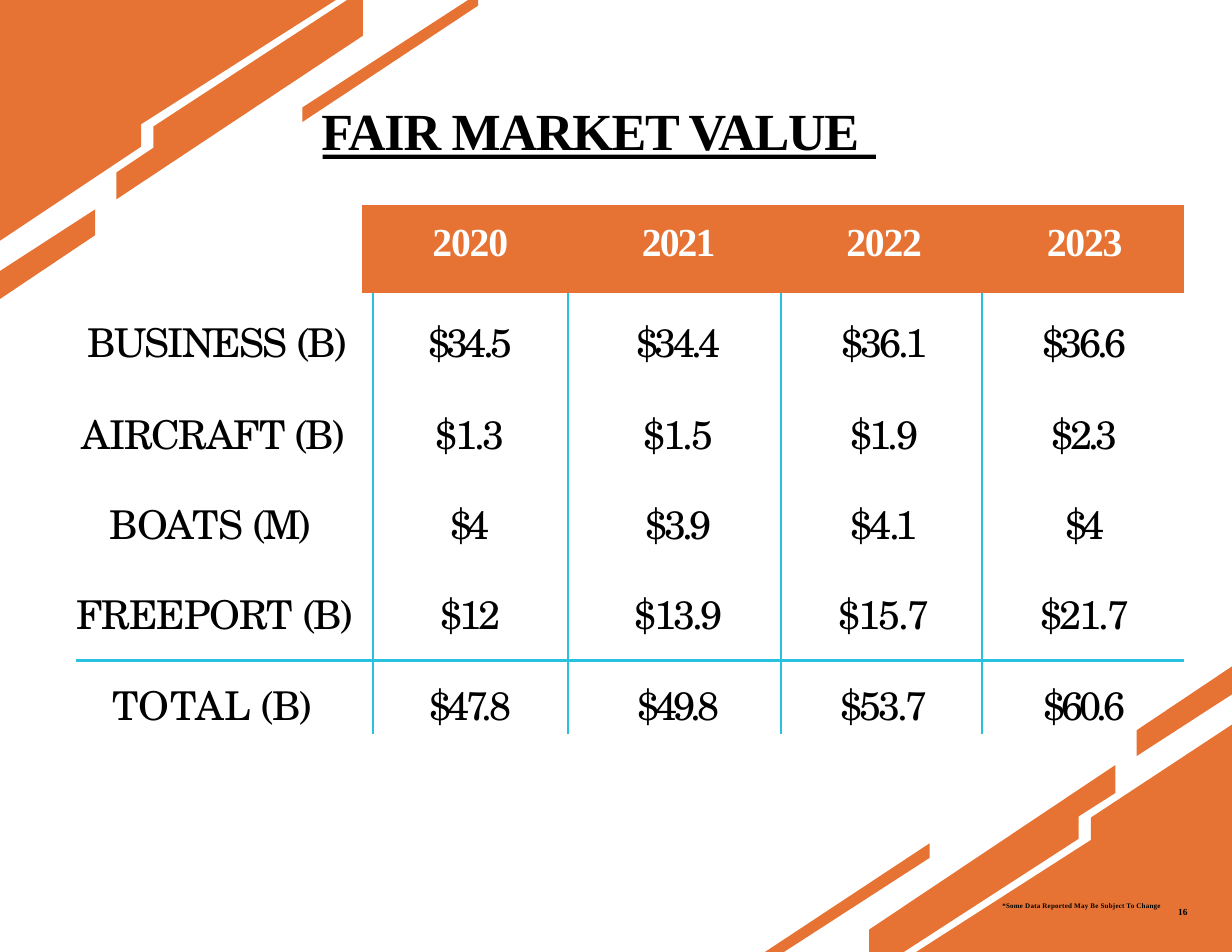
from dataclasses import dataclass

from lxml.etree import SubElement
from pptx import Presentation
from pptx.dml.color import RGBColor
from pptx.enum.shapes import MSO_SHAPE
from pptx.enum.text import PP_ALIGN
from pptx.oxml.ns import qn
from pptx.util import Inches, Pt


@dataclass(frozen=True)
class Theme:
    orange: RGBColor = RGBColor(0xE6, 0x73, 0x34)
    cyan: RGBColor = RGBColor(0x28, 0xC1, 0xDF)
    black: RGBColor = RGBColor(0, 0, 0)
    white: RGBColor = RGBColor(0xFF, 0xFF, 0xFF)
    serif: str = "Times New Roman"
    school: str = "TeX Gyre Schola"
    title: float = 33.5
    body: float = 25.5
    note: float = 4.5
    page: float = 6
    thin: float = 1.5
    thick: float = 2.25


THEME = Theme()
PLAIN_STYLE = "{2D5ABB26-0587-4C30-8999-92F81FD0307C}"
WIDTHS = [2.55, 0.1, 1.74, 1.9, 1.8, 1.8]
HEIGHTS = [0.79, 0.83, 0.81, 0.81, 0.83, 0.58]
INDENTS = [0, 0.08, 0.05, 0.03]

# Each text comes with its letter spacing in points.
YEARS = [("2020", -0.8), ("2021", -1.3), ("2022", -0.8), ("2023", -0.8)]
# Top inset, label indent, label runs, yearly values
ROWS = [
    (0.17, 0.1, [("BUSINESS ", -1.2), ("(B)", -1.8)],
     [("$34.5", -2.4), ("$34.4", -2.5), ("$36.1", -1.9), ("$36.6", -2.5)]),
    (0.16, 0.05, [("AIRCRAFT ", -0.8), ("(B)", -1.8)],
     [("$1.3", -1.6), ("$1.5", -1.5), ("$1.9", -1.8), ("$2.3", -2.5)]),
    (0.15, 0.3, [("BOATS ", -0.5), ("(M)", -2.2)],
     [("$4", -3.3), ("$3.9", -2.5), ("$4.1", -1.8), ("$4", -3.3)]),
    (0.15, 0, [("FREEPORT ", -0.7), ("(B)", -1.8)],
     [("$12", -1.9), ("$13.9", -1.9), ("$15.7", -1.4), ("$21.7", -1.6)]),
    (0.13, 0.32, [("TOTAL ", 0), ("(B)", -1.8)],
     [("$47.8", -2.4), ("$49.8", -2.8), ("$53.7", -2), ("$60.6", -2.9)]),
]

TOP_BANDS = [
    [(0.85, 1.87), (0, 2.42), (0, 2.67), (0.85, 2.1)],
    [(3, 0), (0, 0), (0, 2.15), (1.26, 1.31), (1.26, 1.11)],
    [(3.24, 0), (3.1, 0), (1.37, 1.13), (1.37, 1.32), (1.04, 1.54),
     (1.04, 1.78), (3.24, 0.32)],
    [(4.27, 0), (4.18, 0), (2.7, 0.96), (2.7, 1.09), (4.27, 0.05)],
]
LOW_BANDS = [
    [(8.3, 7.53), (6.83, 8.5), (7, 8.5), (8.3, 7.66)],
    [(9.96, 6.83), (7.76, 8.3), (7.76, 8.5), (8.07, 8.5), (9.63, 7.49),
     (9.63, 7.29), (9.96, 7.08)],
    [(11, 6.47), (9.74, 7.3), (9.74, 7.5), (8.18, 8.5), (11, 8.5)],
    [(11, 5.95), (10.15, 6.52), (10.15, 6.75), (11, 6.2)],
]


def paint(shape, color):
    shape.shadow.inherit = False
    shape.fill.solid()
    shape.fill.fore_color.rgb = color
    shape.line.fill.background()


def add_bands(slide, bands):
    """Draw all bands of one corner as a single outline."""
    paths = [[(Inches(x), Inches(y)) for x, y in band] for band in bands]
    build = slide.shapes.build_freeform(*paths[0][0])
    for num, path in enumerate(paths):
        if num:
            build.move_to(*path[0])
        build.add_line_segments(path[1:], close=True)
    paint(build.convert_to_shape(), THEME.orange)


def write(para, runs, face, size, color, bold=False, indent=0, align=PP_ALIGN.LEFT):
    para.alignment = align
    if indent:
        para._p.get_or_add_pPr().set("marL", str(Inches(indent)))
    font = para.font
    font.name, font.size, font.bold = face, Pt(size), bold
    font.color.rgb = color
    for text, gap in runs:
        run = para.add_run()
        run.text = text
        run._r.get_or_add_rPr().set("spc", str(round(gap * 100)))


def add_label(slide, box, text, gap, size, inset, wrap=True):
    frame = slide.shapes.add_textbox(*map(Inches, box)).text_frame
    frame.margin_left = frame.margin_right = frame.margin_bottom = 0
    frame.margin_top = Inches(inset)
    frame.word_wrap = wrap
    write(frame.paragraphs[0], [(text, gap)], THEME.serif, size,
          THEME.black, bold=True, indent=0.01)


def set_edges(cell, edges):
    """Add border lines; edges maps L, R, T or B to a width in points."""
    props = cell._tc.get_or_add_tcPr()
    lines = []
    for side in "LRTB":
        if side in edges:
            line = SubElement(props, qn("a:ln" + side), w=str(Pt(edges[side])))
            fill = SubElement(line, qn("a:solidFill"))
            SubElement(fill, qn("a:srgbClr"), val=str(THEME.cyan))
            lines.append(line)
    for place, line in enumerate(lines):
        props.insert(place, line)


def find_edges(row, col):
    edges = {}
    if row and col > 1:
        edges["L"] = THEME.thin
    if row and 0 < col < len(WIDTHS) - 1:
        edges["R"] = THEME.thin
    total = len(HEIGHTS) - 1
    if row == total:
        edges["T"] = THEME.thick
    if row == total - 1:
        edges["B"] = THEME.thick
    return edges


def style_cell(cell, row, col, inset):
    cell.margin_left = cell.margin_right = cell.margin_bottom = 0
    cell.margin_top = Inches(inset)
    if row == 0 and col:
        cell.fill.solid()
        cell.fill.fore_color.rgb = THEME.orange
    else:
        cell.fill.background()
    set_edges(cell, find_edges(row, col))


def add_values(slide):
    frame = slide.shapes.add_table(
        len(HEIGHTS), len(WIDTHS), Inches(0.68), Inches(1.83),
        Inches(sum(WIDTHS)), Inches(sum(HEIGHTS)))
    table = frame.table
    table.first_row = table.horz_banding = False
    table._tbl.tblPr.find(qn("a:tableStyleId")).text = PLAIN_STYLE
    for col, width in zip(table.columns, WIDTHS):
        col.width = Inches(width)
    for row, height in zip(table.rows, HEIGHTS):
        row.height = Inches(height)

    for row, (inset, indent, label, values) in enumerate([(0.14, 0, [], YEARS)] + ROWS):
        head = row == 0
        face = THEME.serif if head else THEME.school
        color = THEME.white if head else THEME.black
        for col in range(len(WIDTHS)):
            style_cell(table.cell(row, col), row, col, inset)
        write(table.cell(row, 0).text_frame.paragraphs[0], label,
              face, THEME.body, color, indent=indent)
        for col, (value, shift) in enumerate(zip(values, INDENTS), start=2):
            write(table.cell(row, col).text_frame.paragraphs[0], [value],
                  face, THEME.body, color, head, shift, PP_ALIGN.CENTER)


def add_rule(slide):
    rule = slide.shapes.add_shape(
        MSO_SHAPE.RECTANGLE, Inches(2.88), Inches(1.38), Inches(4.94), Inches(0.04))
    paint(rule, THEME.black)


def main():
    deck = Presentation()
    deck.slide_width, deck.slide_height = Inches(11), Inches(8.5)
    slide = deck.slides.add_slide(deck.slide_layouts[6])
    add_bands(slide, LOW_BANDS)
    add_values(slide)
    add_label(slide, (8.94, 8.03, 1.43, 0.11),
              "*Some Data Reported May Be Subject To Change", 0.12, THEME.note, 0.02, False)
    add_label(slide, (10.51, 8.07, 0.11, 0.13), "16", 0, THEME.page, 0.02, False)
    add_rule(slide)
    add_label(slide, (2.86, 0.87, 4.97, 0.59), "FAIR MARKET VALUE", -0.8, THEME.title, 0.01)
    add_bands(slide, TOP_BANDS)
    deck.save("out.pptx")


if __name__ == "__main__":
    main()
